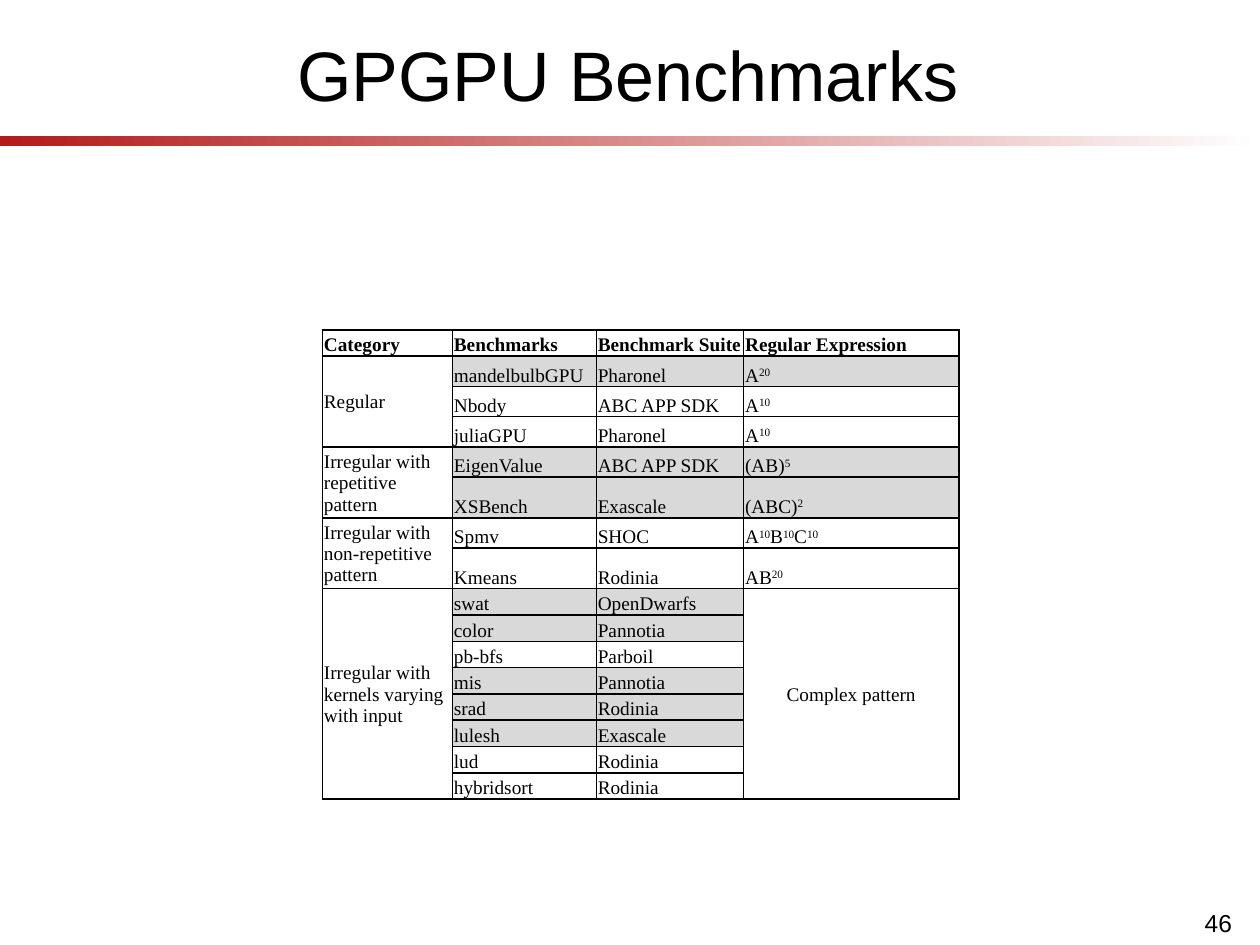
from lxml import etree
from pptx import Presentation
from pptx.dml.color import RGBColor
from pptx.enum.shapes import MSO_SHAPE
from pptx.enum.text import MSO_ANCHOR, PP_ALIGN
from pptx.oxml.ns import qn
from pptx.util import Cm, Pt

# Content
TITLE = "GPGPU Benchmarks"
PAGE_NUMBER = "46"
HEADERS = ["Category", "Benchmarks", "Benchmark Suite", "Regular Expression"]
# Benchmark, suite, pattern as (base, exponent) pairs, shaded
GROUPS = [
    ("Regular", [
        ("mandelbulbGPU", "Pharonel", [("A", "20")], True),
        ("Nbody", "ABC APP SDK", [("A", "10")], False),
        ("juliaGPU", "Pharonel", [("A", "10")], False),
    ]),
    ("Irregular with repetitive pattern", [
        ("EigenValue", "ABC APP SDK", [("(AB)", "5")], True),
        ("XSBench", "Exascale", [("(ABC)", "2")], True),
    ]),
    ("Irregular with non-repetitive pattern", [
        ("Spmv", "SHOC", [("A", "10"), ("B", "10"), ("C", "10")], False),
        ("Kmeans", "Rodinia", [("AB", "20")], False),
    ]),
    ("Irregular with kernels varying with input", [
        ("swat", "OpenDwarfs", None, True),
        ("color", "Pannotia", None, True),
        ("pb-bfs", "Parboil", None, False),
        ("mis", "Pannotia", None, True),
        ("srad", "Rodinia", None, True),
        ("lulesh", "Exascale", None, True),
        ("lud", "Rodinia", None, False),
        ("hybridsort", "Rodinia", None, False),
    ]),
]
SHARED_PATTERN = "Complex pattern"

# Format
COLORS = {"text": "000000", "border": "000000", "shade": "D9D9D9",
          "bar_start": "B31B1B", "bar_end": "FFFFFF"}
COLUMN_WIDTHS = [2.62, 2.9, 2.97, 4.34]
PLAIN_HEIGHT, EXPONENT_HEIGHT = 0.53, 0.61
TITLE_FONT = {"name": "Arial", "size": Pt(40)}
NUMBER_FONT = {"name": "Arial", "size": Pt(14)}
CELL_FONT = {"name": "Times New Roman", "size": Pt(11), "bold": False}
HEADER_FONT = CELL_FONT | {"bold": True}
CELL_MARGINS = {"margin_left": Cm(0.03), "margin_right": Cm(0.03),
                "margin_top": Cm(0.03), "margin_bottom": 0}


def color(name):
    return RGBColor.from_string(COLORS[name])


def apply(target, values):
    for name, value in values.items():
        setattr(target, name, value)


def add_run(paragraph, text, font, superscript=False):
    run = paragraph.add_run()
    run.text = text
    apply(run.font, font)
    run.font.color.rgb = color("text")
    if superscript:
        run.font._element.set("baseline", "30000")


def add_border(cell):
    properties = cell._tc.get_or_add_tcPr()
    for side in ("a:lnL", "a:lnR", "a:lnT", "a:lnB"):
        line = etree.SubElement(properties, qn(side), w=str(Pt(1)))
        fill = etree.SubElement(line, qn("a:solidFill"))
        etree.SubElement(fill, qn("a:srgbClr"), val=COLORS["border"])


def fill_cell(cell, parts, font=CELL_FONT, anchor=MSO_ANCHOR.BOTTOM,
              align=PP_ALIGN.LEFT, shaded=False):
    apply(cell, CELL_MARGINS | {"vertical_anchor": anchor})
    if shaded:
        cell.fill.solid()
        cell.fill.fore_color.rgb = color("shade")
    paragraph = cell.text_frame.paragraphs[0]
    paragraph.alignment = align
    for base, exponent in parts:
        add_run(paragraph, base, font)
        if exponent:
            add_run(paragraph, exponent, font, superscript=True)


def add_bar(slide):
    bar = slide.shapes.add_shape(MSO_SHAPE.RECTANGLE, 0, Cm(2.74), Cm(25.4), Cm(0.2))
    bar.shadow.inherit = False
    bar.line.fill.background()
    bar.fill.gradient()
    bar.fill.gradient_angle = 0
    for stop, name, position in zip(bar.fill.gradient_stops, ("bar_start", "bar_end"), (0, 1)):
        stop.color.rgb = color(name)
        stop.position = position


def add_title(slide):
    title = slide.shapes.title
    apply(title, {"left": Cm(0.64), "top": Cm(0.64), "width": Cm(24.03), "height": Cm(1.7)})
    title.text_frame.vertical_anchor = MSO_ANCHOR.MIDDLE
    heading = title.text_frame.paragraphs[0]
    heading.alignment = PP_ALIGN.CENTER
    add_run(heading, TITLE, TITLE_FONT)


def add_page_number(slide):
    number = slide.shapes.add_textbox(Cm(23.72), Cm(18.19), Cm(1.68), Cm(0.86))
    number.text_frame.word_wrap = True
    line = number.text_frame.paragraphs[0]
    line.alignment = PP_ALIGN.CENTER
    add_run(line, PAGE_NUMBER, NUMBER_FONT)


def add_benchmarks(slide):
    benchmarks = [row for _, rows in GROUPS for row in rows]
    heights = [PLAIN_HEIGHT] + [EXPONENT_HEIGHT if row[2] else PLAIN_HEIGHT for row in benchmarks]
    table = slide.shapes.add_table(
        len(heights), len(HEADERS), Cm(6.5), Cm(6.65),
        Cm(sum(COLUMN_WIDTHS)), Cm(sum(heights))).table
    apply(table, {"first_row": False, "horz_banding": False})
    for column, width in zip(table.columns, COLUMN_WIDTHS):
        column.width = Cm(width)
    for row, height in zip(table.rows, heights):
        row.height = Cm(height)
    for cell in table.iter_cells():
        add_border(cell)
        cell.fill.background()

    # Header row
    for index, header in enumerate(HEADERS):
        fill_cell(table.cell(0, index), [(header, None)], HEADER_FONT)

    # One merged category per group of benchmarks
    top = 1
    for category, rows in GROUPS:
        bottom = top + len(rows) - 1
        table.cell(top, 0).merge(table.cell(bottom, 0))
        fill_cell(table.cell(top, 0), [(category, None)], anchor=MSO_ANCHOR.MIDDLE)
        for index, (benchmark, suite, pattern, shaded) in enumerate(rows, top):
            fill_cell(table.cell(index, 1), [(benchmark, None)], shaded=shaded)
            fill_cell(table.cell(index, 2), [(suite, None)], shaded=shaded)
            if pattern:
                fill_cell(table.cell(index, 3), pattern, shaded=shaded)
        if not rows[0][2]:
            table.cell(top, 3).merge(table.cell(bottom, 3))
            fill_cell(table.cell(top, 3), [(SHARED_PATTERN, None)],
                      anchor=MSO_ANCHOR.MIDDLE, align=PP_ALIGN.CENTER)
        top = bottom + 1


def main():
    deck = Presentation()
    apply(deck, {"slide_width": Cm(25.4), "slide_height": Cm(19.05)})
    slide = deck.slides.add_slide(deck.slide_layouts[5])
    add_bar(slide)
    add_page_number(slide)
    add_title(slide)
    add_benchmarks(slide)
    deck.save("out.pptx")


if __name__ == "__main__":
    main()
